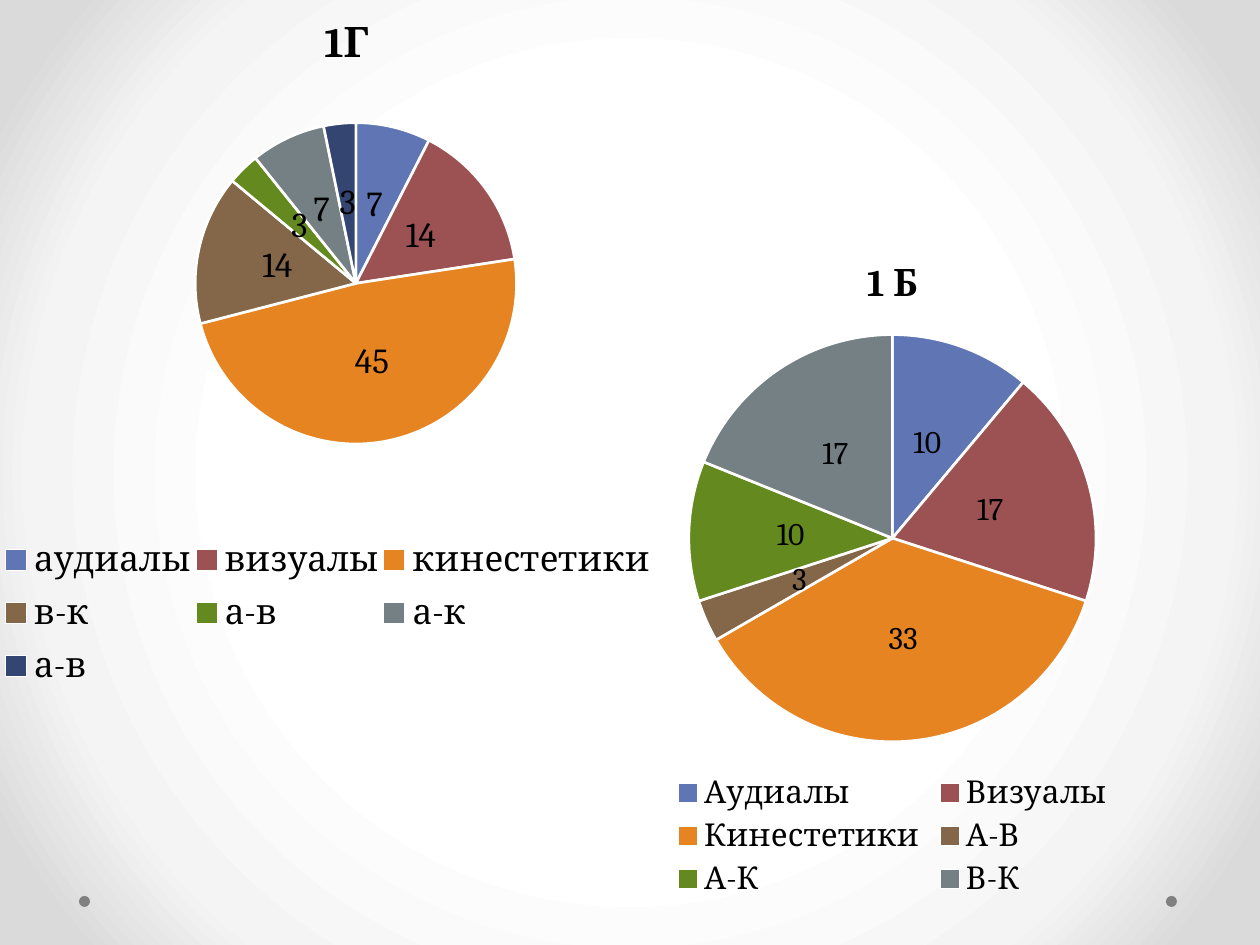
from lxml import etree
from pptx import Presentation
from pptx.chart.data import CategoryChartData
from pptx.dml.color import RGBColor
from pptx.enum.chart import XL_CHART_TYPE as ChartType
from pptx.enum.chart import XL_LABEL_POSITION as LabelPosition
from pptx.enum.chart import XL_LEGEND_POSITION as LegendPosition
from pptx.enum.shapes import MSO_SHAPE as Shape
from pptx.oxml import parse_xml
from pptx.oxml.ns import nsdecls, qn
from pptx.util import Pt

PX = 914400 // 126
SLIDE_SIZE = (1260, 945)


class Theme:
    font = "Cambria"
    text = "000000"
    dot = "808080"
    border = "FFFFFF"
    border_width = 1.5
    title_scale = 1.2
    slices = ["6076B4", "9C5252", "E68422", "846648", "63891F", "758085", "354571"]
    background = [(50, "FFFFFF"), (76, "F4F4F4"), (92, "DADADA")]


PIES = [
    {
        "title": "1 Б",
        "box": (532, 231, 721, 673),
        "size": 18,
        "values": [("Аудиалы", 10), ("Визуалы", 17), ("Кинестетики", 33),
                   ("А-В", 3), ("А-К", 10), ("В-К", 17)],
        "layouts": {},
    },
    {
        "title": "1Г",
        "box": (0, 0, 737, 713),
        "size": 20,
        "values": [("аудиалы", 7), ("визуалы", 14), ("кинестетики", 45), ("в-к", 14),
                   ("а-в", 3), ("а-к", 7), ("а-в", 3)],
        "layouts": {
            "title": {"x": 0.43, "y": 0.01},
            "plotArea": {"x": 0.265, "y": 0.085, "w": 0.436, "h": 0.625},
            "legend": {"x": 0, "y": 0.74, "w": 0.89, "h": 0.24},
        },
    },
]
DOT_SIZE = 11
DOT_TOP = 896
DOT_LEFTS = [1166, 79]


def emu(*lengths):
    return [length * PX for length in lengths]


def color(value):
    return RGBColor.from_string(value)


def format_font(font, size, bold=False):
    font.name = Theme.font
    font.size = Pt(size)
    font.bold = bold
    font.color.rgb = color(Theme.text)


def write_text(text_frame, text, size, bold=False):
    text_frame.text = text
    format_font(text_frame.paragraphs[0].runs[0].font, size, bold)


def paint_background(slide):
    slide.background.fill.gradient()
    stops = "".join(
        f'<a:gs pos="{position * 1000}"><a:srgbClr val="{value}"/></a:gs>'
        for position, value in Theme.background
    )
    gradient = parse_xml(
        f'<a:gradFill {nsdecls("a")} rotWithShape="1"><a:gsLst>{stops}</a:gsLst>'
        '<a:path path="circle"><a:fillToRect l="50000" t="50000" r="50000" b="50000"/>'
        "</a:path></a:gradFill>"
    )
    previous = next(slide.element.iter(qn("a:gradFill")))
    previous.getparent().replace(previous, gradient)


def add_dot(slide, left):
    dot = slide.shapes.add_shape(Shape.OVAL, *emu(left, DOT_TOP, DOT_SIZE, DOT_SIZE))
    dot.shadow.inherit = False
    dot.fill.solid()
    dot.fill.fore_color.rgb = color(Theme.dot)
    dot.line.fill.background()


def place_part(chart, part, bounds):
    element = next(chart.element.iter(qn(f"c:{part}")))
    for layout in element.findall(qn("c:layout")):
        element.remove(layout)
    layout = etree.Element(qn("c:layout"))
    manual = etree.SubElement(layout, qn("c:manualLayout"))
    target = {"layoutTarget": "inner"} if part == "plotArea" else {}
    settings = {**target, "xMode": "edge", "yMode": "edge", **bounds}
    for name, value in settings.items():
        etree.SubElement(manual, qn(f"c:{name}")).set("val", str(value))
    element.insert(0 if part == "plotArea" else 1, layout)


def add_pie(slide, title, box, size, values, layouts):
    categories, numbers = zip(*values)
    data = CategoryChartData()
    data.categories = categories
    data.add_series("Series 1", numbers)
    chart = slide.shapes.add_chart(ChartType.PIE, *emu(*box), data).chart
    format_font(chart.font, size)
    chart.has_title = True
    write_text(chart.chart_title.text_frame, title, size=size * Theme.title_scale, bold=True)
    chart.chart_title.include_in_layout = False
    chart.has_legend = True
    chart.legend.position = LegendPosition.BOTTOM
    chart.legend.include_in_layout = False
    format_font(chart.legend.font, size)

    pie = chart.plots[0]
    pie.vary_by_categories = True
    pie.has_data_labels = True
    labels = pie.data_labels
    labels.show_value = True
    labels.show_percentage = False
    labels.position = LabelPosition.CENTER
    format_font(labels.font, size)
    for index, fill in zip(range(len(values)), Theme.slices):
        slice_format = pie.series[0].points[index].format
        slice_format.fill.solid()
        slice_format.fill.fore_color.rgb = color(fill)
        slice_format.line.color.rgb = color(Theme.border)
        slice_format.line.width = Pt(Theme.border_width)
    for part, bounds in layouts.items():
        place_part(chart, part, bounds)


def main():
    presentation = Presentation()
    presentation.slide_width, presentation.slide_height = emu(*SLIDE_SIZE)
    slide = presentation.slides.add_slide(presentation.slide_layouts[6])
    paint_background(slide)
    for left in DOT_LEFTS:
        add_dot(slide, left)
    for pie in PIES:
        add_pie(slide, **pie)
    presentation.save("out.pptx")


if __name__ == "__main__":
    main()
